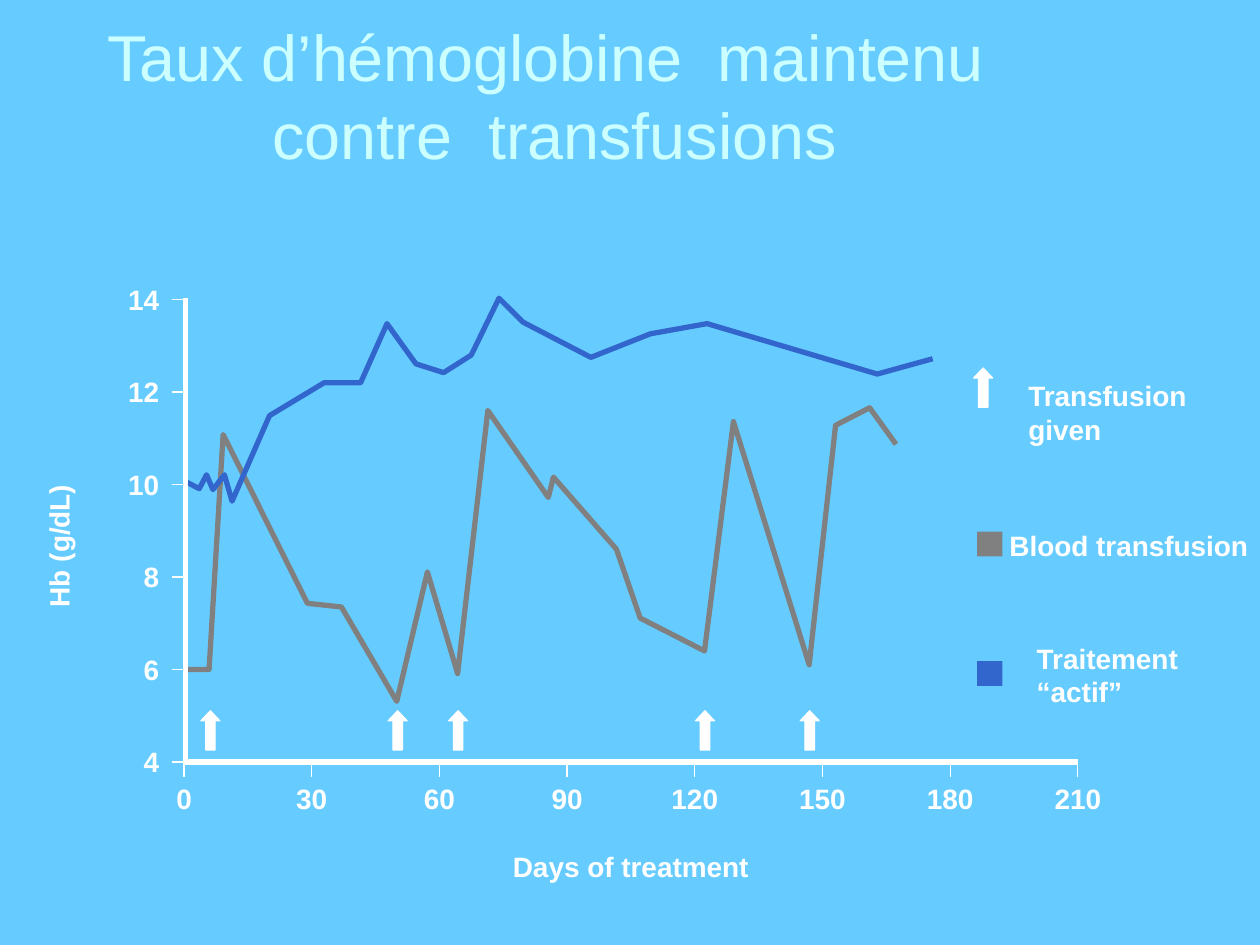
from pptx import Presentation
from pptx import util as u
from pptx.dml.color import RGBColor
from pptx.enum import shapes, text
from pptx.oxml.ns import qn
from lxml import etree

SKY = RGBColor(0x66, 0xCC, 0xFF)
ICE = RGBColor(0xCC, 0xFF, 0xFF)
WHITE = RGBColor(0xFF, 0xFF, 0xFF)
GREY = RGBColor(0x80, 0x80, 0x80)
BLUE = RGBColor(0x33, 0x66, 0xCC)

FONT = "Arial"
ORIGIN_X, ORIGIN_Y = 3.71, 15.36
CM_PER_DAY, CM_PER_GRAM = 0.0858, 0.932
LOWEST_HB = 4
DAY_TICK, HB_TICK = 0.3, 0.25
DIGIT_WIDTH = 0.32
ARROW_WIDTH, ARROW_HEIGHT = 0.38, 0.79

BLOOD_TRANSFUSION = [
    (0, 6), (5.9, 6), (9.2, 11.08), (29, 7.43), (37, 7.35), (50, 5.31),
    (57.2, 8.11), (64.3, 5.91), (71.4, 11.6), (85.6, 9.72), (86.8, 10.16),
    (101.6, 8.6), (107.2, 7.11), (122.3, 6.4), (129.1, 11.36),
    (146.9, 6.1), (153.1, 11.28), (161.1, 11.66), (167.3, 10.87),
]
ACTIVE_TREATMENT = [
    (0, 10.08), (3.6, 9.91), (5.3, 10.21), (6.8, 9.89), (9.5, 10.21),
    (11.3, 9.64), (20.1, 11.49), (32.9, 12.2), (41.5, 12.2), (47.7, 13.48),
    (54.5, 12.61), (61, 12.42), (67.5, 12.8), (74, 14.03), (79.7, 13.51),
    (95.6, 12.75), (109.6, 13.26), (122.9, 13.48), (162.9, 12.39),
    (175.9, 12.72),
]
AXES = [(0.3, 14.03), (0.3, LOWEST_HB), (210, LOWEST_HB)]
TRANSFUSION_DAYS = [6.2, 50.2, 64.4, 122.4, 147]


def day_x(day):
    return ORIGIN_X + day * CM_PER_DAY


def hb_y(hb):
    return ORIGIN_Y - (hb - LOWEST_HB) * CM_PER_GRAM


def add_span(para, words, size, color, bold):
    span = para.add_run()
    span.text = words
    span.font.name = FONT
    span.font.size = u.Pt(size)
    span.font.bold = bold
    span.font.color.rgb = color


def add_title(page, words):
    title = page.shapes.title
    title.left, title.top = u.Cm(0.86), u.Cm(0)
    title.width, title.height = u.Cm(20.65), u.Cm(3.81)
    frame = title.text_frame
    frame.auto_size = text.MSO_AUTO_SIZE.NONE
    frame.vertical_anchor = text.MSO_ANCHOR.MIDDLE
    para = frame.paragraphs[0]
    para.alignment = text.PP_ALIGN.CENTER
    add_span(para, words, 37, ICE, False)


def add_label(page, words, left, top, width, height, align=text.PP_ALIGN.LEFT,
              anchor=text.MSO_ANCHOR.TOP, insets=(0, 0, 0, 0), wrap=False):
    box = page.shapes.add_textbox(u.Cm(left), u.Cm(top), u.Cm(width), u.Cm(height))
    frame = box.text_frame
    frame.word_wrap = wrap
    frame.auto_size = text.MSO_AUTO_SIZE.SHAPE_TO_FIT_TEXT
    frame.vertical_anchor = anchor
    (frame.margin_left, frame.margin_top,
     frame.margin_right, frame.margin_bottom) = map(u.Cm, insets)
    para = frame.paragraphs[0]
    para.alignment = align
    add_span(para, words, 16, WHITE, True)
    return box


def add_curve(page, readings, color):
    points = [(u.Cm(day_x(day)), u.Cm(hb_y(hb))) for day, hb in readings]
    builder = page.shapes.build_freeform(*points[0])
    builder.add_line_segments(points[1:], close=False)
    curve = builder.convert_to_shape()
    curve.shadow.inherit = False
    curve.fill.background()
    curve.line.color.rgb = color
    curve.line.width = u.Pt(3)


def add_tick(page, x1, y1, x2, y2):
    tick = page.shapes.add_connector(
        shapes.MSO_CONNECTOR.STRAIGHT, u.Cm(x1), u.Cm(y1), u.Cm(x2), u.Cm(y2))
    tick.line.color.rgb = WHITE
    tick.line.width = u.Pt(0.75)
    etree.SubElement(tick._element.spPr, qn("a:effectLst"))


def add_day_scale(page):
    for day in range(0, 211, 30):
        x = day_x(day)
        add_tick(page, x, ORIGIN_Y + DAY_TICK, x, ORIGIN_Y)
        width = DIGIT_WIDTH * len(str(day))
        add_label(page, str(day), x - width / 2, 15.45, width, 0.99,
                  text.PP_ALIGN.CENTER, insets=(0, 0.3, 0, 0))


def add_hb_scale(page):
    for hb in range(LOWEST_HB, 15, 2):
        y = hb_y(hb)
        add_tick(page, ORIGIN_X - HB_TICK, y, ORIGIN_X, y)
        width = 0.4 + DIGIT_WIDTH * len(str(hb))
        add_label(page, str(hb), 3.61 - width, y - 0.35, width, 0.68,
                  text.PP_ALIGN.RIGHT, text.MSO_ANCHOR.MIDDLE, (0, 0, 0.4, 0))


def add_filled(page, kind, left, top, width, height, color):
    shape = page.shapes.add_shape(
        kind, u.Cm(left), u.Cm(top), u.Cm(width), u.Cm(height))
    shape.shadow.inherit = False
    shape.fill.solid()
    shape.fill.fore_color.rgb = color
    shape.line.fill.background()
    return shape


def add_arrow(page, center, top):
    arrow = add_filled(page, shapes.MSO_SHAPE.UP_ARROW, center - ARROW_WIDTH / 2,
                       top, ARROW_WIDTH, ARROW_HEIGHT, WHITE)
    arrow.adjustments[0] = 0.5
    arrow.adjustments[1] = 0.53
    arrow.line.color.rgb = WHITE
    arrow.line.width = u.Pt(0.75)


def add_legend(page):
    padding = (0.25, 0.13, 0.25, 0.13)
    add_arrow(page, 19.82, 7.42)
    add_label(page, "Transfusion given", 20.48, 7.51, 4.47, 1.63,
              insets=padding, wrap=True)
    for top, color in ((10.72, GREY), (13.33, BLUE)):
        add_filled(page, shapes.MSO_SHAPE.RECTANGLE, 19.7, top, 0.51, 0.5, color)
    add_label(page, "Blood transfusion", 20.1, 10.52, 5.36, 0.94,
              insets=padding, wrap=True)
    add_label(page, "Traitement “actif”", 20.9, 12.93, 3.61, 1.37, wrap=True)


def main():
    deck = Presentation()
    deck.slide_width, deck.slide_height = u.Cm(25.4), u.Cm(19.05)
    page = deck.slides.add_slide(deck.slide_layouts[5])
    page.background.fill.solid()
    page.background.fill.fore_color.rgb = SKY

    add_title(page, "Taux d’hémoglobine  maintenu  contre  transfusions")
    add_curve(page, BLOOD_TRANSFUSION, GREY)
    add_curve(page, ACTIVE_TREATMENT, BLUE)
    add_curve(page, AXES, WHITE)
    add_day_scale(page)
    add_hb_scale(page)
    add_label(page, "Days of treatment", 10.34, 17.12, 4.78, 0.68)
    hb_title = add_label(page, "Hb (g/dL)", -1.21, 10.42, 5.31, 1.17,
                         text.PP_ALIGN.CENTER, text.MSO_ANCHOR.BOTTOM,
                         (0, 0, 0, 0.51), wrap=True)
    hb_title.rotation = 270
    for day in TRANSFUSION_DAYS:
        add_arrow(page, day_x(day), 14.33)
    add_legend(page)
    deck.save("out.pptx")


if __name__ == "__main__":
    main()
